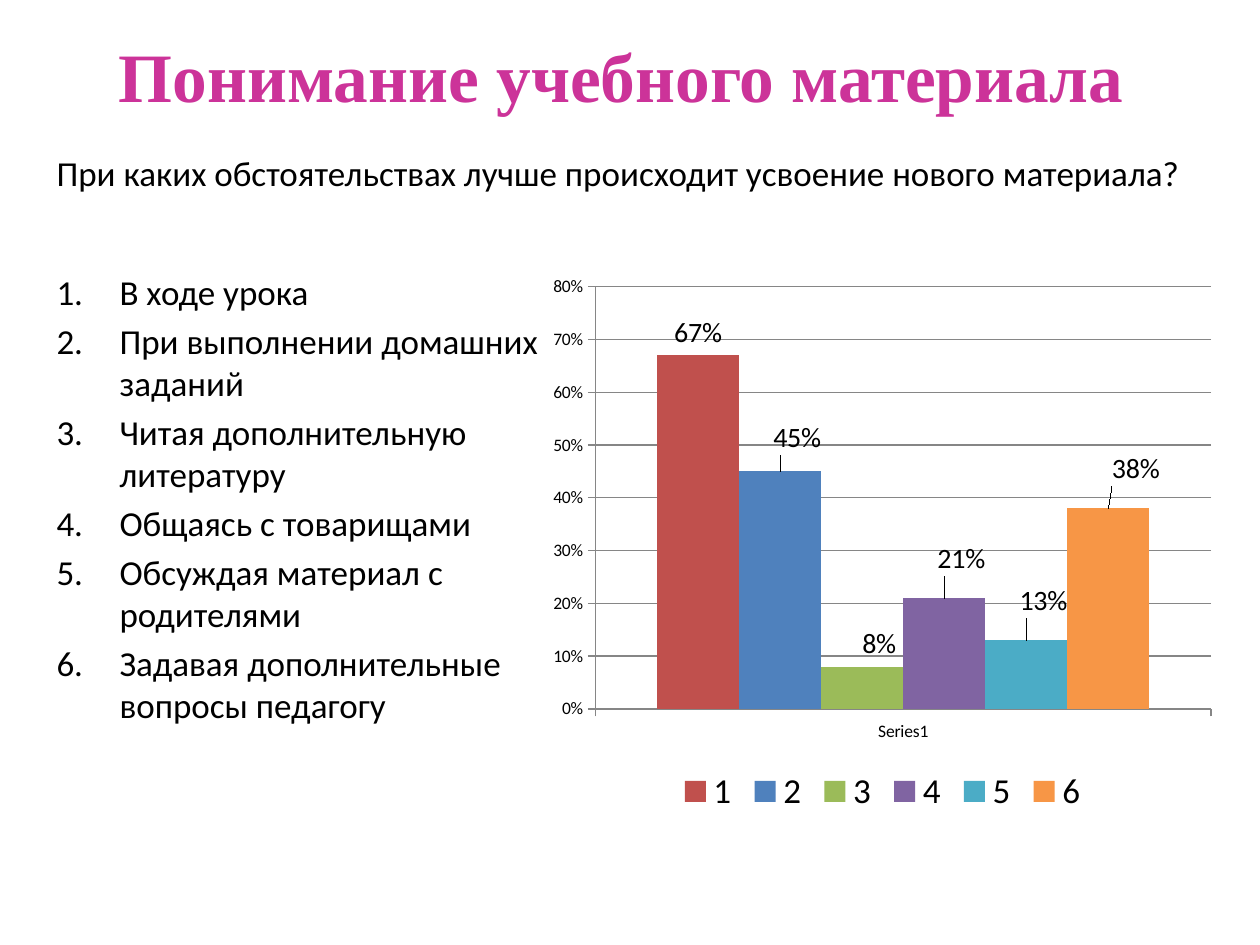
from lxml.etree import SubElement
from pptx import Presentation
from pptx.chart.data import CategoryChartData
from pptx.dml.color import RGBColor
from pptx.enum.chart import XL_CHART_TYPE, XL_LABEL_POSITION, XL_LEGEND_POSITION, XL_TICK_MARK
from pptx.enum.text import MSO_ANCHOR, PP_ALIGN
from pptx.oxml import parse_xml
from pptx.oxml.ns import nsdecls, qn
from pptx.util import Pt

TITLE = "Понимание учебного материала"
QUESTION = "При каких обстоятельствах лучше происходит усвоение нового материала?"
ANSWERS = [
    "В ходе урока",
    "При выполнении домашних заданий",
    "Читая дополнительную литературу",
    "Общаясь с товарищами",
    "Обсуждая материал с родителями",
    "Задавая дополнительные вопросы педагогу",
]
SERIES = [
    {"value": 0.67, "color": "C0504D", "shift": None},
    {"value": 0.45, "color": "4F81BD", "shift": (0.025, -0.02)},
    {"value": 0.08, "color": "9BBB59", "shift": (0.025, 0)},
    {"value": 0.21, "color": "8064A2", "shift": (0.025, -0.03)},
    {"value": 0.13, "color": "4BACC6", "shift": (0.025, -0.03)},
    {"value": 0.38, "color": "F79646", "shift": (0.04, -0.03)},
]
BOXES = {
    "title": (31, 9.4, 648, 67),
    "question": (25.2, 82.8, 663, 36),
    "answers": (25.2, 151.2, 318.2, 294.5),
    "chart": (308.9, 151.2, 391, 317.5),
}
PLOT = {"x": 0.08, "y": 0.04, "w": 0.9, "h": 0.76}
THEME = {
    "title": {"name": "Times New Roman", "size": Pt(39.6), "bold": True, "color": "CC3399"},
    "body": {"name": "Calibri", "size": Pt(20), "color": "000000"},
    "axis": {"name": "Calibri", "size": Pt(10), "color": "000000"},
    "label": {"name": "Calibri", "size": Pt(16), "color": "000000"},
    "panel": "FFFFFF",
    "panel_alpha": "65000",
    "line": "868686",
}
INDENT = Pt(36)


def set_attrs(obj, values):
    for name, value in values.items():
        setattr(obj, name, value)


def set_font(font, style):
    for name, value in style.items():
        if name == "color":
            font.color.rgb = RGBColor.from_string(value)
        else:
            setattr(font, name, value)


def place(key):
    return [Pt(v) for v in BOXES[key]]


def add_text(s, key, lines, style, anchor=MSO_ANCHOR.TOP, align=PP_ALIGN.LEFT,
             panel=True, numbered=False):
    sp = s.shapes.add_textbox(*place(key))
    if panel:
        sp.fill.solid()
        sp.fill.fore_color.rgb = RGBColor.from_string(THEME["panel"])
        color = sp.fill._xPr.find(qn("a:solidFill"))[0]
        SubElement(color, qn("a:alpha"), val=THEME["panel_alpha"])
    tf = sp.text_frame
    set_attrs(tf, {"word_wrap": True, "vertical_anchor": anchor})
    for i, line in enumerate(lines):
        p = tf.paragraphs[0] if i == 0 else tf.add_paragraph()
        p.alignment = align
        if i:
            p.space_before = Pt(style["size"].pt * 0.2)
        if numbered:
            pPr = p._p.get_or_add_pPr()
            pPr.set("marL", str(INDENT))
            pPr.set("indent", str(-INDENT))
            SubElement(pPr, qn("a:buFont"), typeface="+mj-lt")
            SubElement(pPr, qn("a:buAutoNum"), type="arabicPeriod")
        r = p.add_run()
        r.text = line
        set_font(r.font, style)


def layout(box, inner=False):
    target = '<c:layoutTarget val="inner"/>' if inner else ""
    modes = '<c:xMode val="edge"/><c:yMode val="edge"/>' if inner else ""
    sizes = "".join(f'<c:{k} val="{v}"/>' for k, v in box.items())
    return parse_xml(f'<c:layout {nsdecls("c")}><c:manualLayout>{target}{modes}{sizes}'
                     "</c:manualLayout></c:layout>")


def style_series(ser, item):
    ser.format.fill.solid()
    ser.format.fill.fore_color.rgb = RGBColor.from_string(item["color"])
    labels = ser.data_labels
    set_attrs(labels, {"show_value": True, "number_format": "0%",
                       "number_format_is_linked": False,
                       "position": XL_LABEL_POSITION.OUTSIDE_END})
    set_font(labels.font, THEME["label"])
    if item["shift"]:
        label = ser.points[0].data_label
        set_font(label.font, THEME["label"])
        label.position = XL_LABEL_POSITION.OUTSIDE_END
        idx = labels._element.find(qn("c:dLbl")).find(qn("c:idx"))
        idx.addnext(layout(dict(zip("xy", item["shift"]))))


def add_answers_chart(s):
    data = CategoryChartData(number_format="0%")
    data.categories = ["Series1"]
    for i, item in enumerate(SERIES, 1):
        data.add_series(str(i), [item["value"]])
    chart = s.shapes.add_chart(XL_CHART_TYPE.COLUMN_CLUSTERED, *place("chart"), data).chart
    set_attrs(chart, {"has_title": False, "has_legend": True})
    set_font(chart.font, THEME["axis"])
    set_attrs(chart.legend, {"position": XL_LEGEND_POSITION.BOTTOM, "include_in_layout": False})
    set_font(chart.legend.font, THEME["body"])
    plot = chart.plots[0]
    set_attrs(plot, {"gap_width": 150, "overlap": 0, "vary_by_categories": False})
    area = chart._chartSpace.chart.plotArea
    for old in area.findall(qn("c:layout")):
        area.remove(old)
    area.insert(0, layout(PLOT, inner=True))
    value = chart.value_axis
    set_attrs(value, {"minimum_scale": 0, "maximum_scale": 0.8, "major_unit": 0.1,
                      "has_major_gridlines": True})
    set_attrs(value.tick_labels, {"number_format": "0%", "number_format_is_linked": False})
    for axis in (value, chart.category_axis):
        set_attrs(axis, {"major_tick_mark": XL_TICK_MARK.OUTSIDE,
                         "minor_tick_mark": XL_TICK_MARK.NONE})
    for part in (value, chart.category_axis, value.major_gridlines):
        part.format.line.color.rgb = RGBColor.from_string(THEME["line"])
        part.format.line.width = Pt(0.75)
    for ser, item in zip(plot.series, SERIES):
        style_series(ser, item)


def main():
    """Build the survey slide with its question, answers and column chart."""
    prs = Presentation()
    set_attrs(prs, {"slide_width": Pt(720), "slide_height": Pt(540)})
    s = prs.slides.add_slide(prs.slide_layouts[6])
    add_text(s, "title", [TITLE], THEME["title"], MSO_ANCHOR.MIDDLE, PP_ALIGN.CENTER, panel=False)
    add_text(s, "question", [QUESTION], THEME["body"])
    add_text(s, "answers", ANSWERS, THEME["body"], numbered=True)
    add_answers_chart(s)
    prs.save("out.pptx")


if __name__ == "__main__":
    main()
